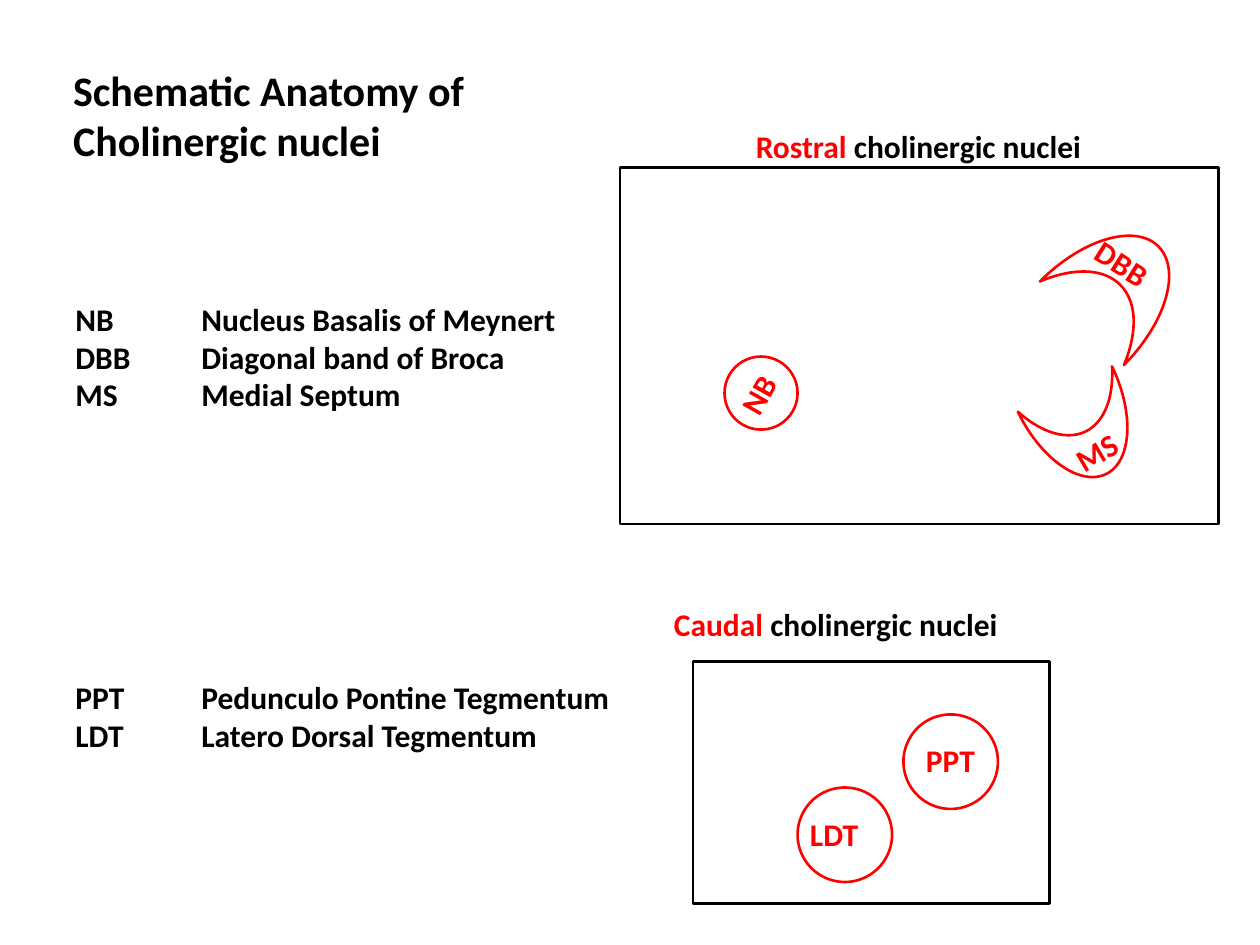
from dataclasses import dataclass

from lxml import etree
from pptx import Presentation, util as u
from pptx.dml.color import RGBColor
from pptx.enum import shapes, text
from pptx.oxml import ns


@dataclass(frozen=True)
class Theme:
    ink: str = "000000"
    red: str = "FF0000"
    font: str = "Calibri"
    head: int = 24
    body: int = 18
    line: float = 1.5


look = Theme()
kind = shapes.MSO_SHAPE


def write(box, lines, size=look.body, wrap=True, turn=0, gaps=()):
    """Fill box with lines of (words, colour) runs; gaps maps line to points above."""
    box.rotation = turn
    frame = box.text_frame
    frame.word_wrap = wrap
    frame.auto_size = text.MSO_AUTO_SIZE.NONE
    frame.vertical_anchor = text.MSO_ANCHOR.TOP
    above = dict(gaps)
    for i, runs in enumerate(lines):
        para = frame.add_paragraph() if i else frame.paragraphs[0]
        para.alignment = text.PP_ALIGN.LEFT
        para.space_before = u.Pt(above.get(i, 0))
        for words, color in runs:
            run = para.add_run()
            run.text = words
            run.font.name = look.font
            run.font.size = u.Pt(size)
            run.font.bold = True
            run.font.color.rgb = RGBColor.from_string(color)


def draw(form, spot, color, turn=0):
    """Add an unfilled outline shape."""
    shape = slide.shapes.add_shape(form, *map(u.Inches, spot))
    shape.rotation = turn
    shape.shadow.inherit = False
    shape.fill.background()
    shape.line.color.rgb = RGBColor.from_string(color)
    shape.line.width = u.Pt(look.line)


deck = Presentation()
deck.slide_width, deck.slide_height = u.Inches(10), u.Inches(7.5)
slide = deck.slides.add_slide(deck.slide_layouts.get_by_name("Title Only"))

# Title
title = slide.shapes.title
title.left, title.top = u.Inches(0.48), u.Inches(0.46)
title.width, title.height = u.Inches(3.52), u.Inches(1.3)
write(title, [[("Schematic Anatomy of", look.ink)],
              [("Cholinergic nuclei", look.ink)]], size=look.head)

# Regions: frame, then heading
regions = [
    ("Rostral", (4.92, 1.33, 4.75, 2.83), (5.9, 0.96, 3.26, 0.4)),
    ("Caudal", (5.5, 5.25, 2.83, 1.92), (5.25, 4.75, 3.23, 0.4)),
]
for name, pane, spot in regions:
    draw(kind.RECTANGLE, pane, look.ink)
    box = slide.shapes.add_textbox(*map(u.Inches, spot))
    write(box, [[(name, look.red), (" cholinergic nuclei", look.ink)]], wrap=False)

# Nuclei: outline and its turn, then label and its turn
nuclei = [
    ("LDT", kind.OVAL, (6.33, 6.25, 0.75, 0.75), 0, (6.33, 6.42, 0.75, 0.4), 0),
    ("PPT", kind.OVAL, (7.17, 5.67, 0.75, 0.75), 0, (7.25, 5.83, 0.75, 0.4), 0),
    ("MS", kind.MOON, (8.24, 3.01, 0.75, 0.83), 244.3, (8.42, 3.33, 0.75, 0.4), 329.5),
    ("NB", kind.OVAL, (5.75, 2.83, 0.58, 0.58), 0, (5.75, 2.91, 0.56, 0.4), 299.3),
    ("DBB", kind.MOON, (8.46, 1.79, 0.86, 0.94), 134.8, (8.58, 1.92, 0.75, 0.4), 32.3),
]
for name, form, area, tilt, spot, turn in nuclei:
    draw(form, area, look.red, tilt)
    box = slide.shapes.add_textbox(*map(u.Inches, spot))
    write(box, [[(name, look.red)]], wrap=name != "NB", turn=turn)

# Key to the short names, with the caudal group set lower
terms = [
    "NB\tNucleus Basalis of Meynert",
    "DBB \tDiagonal band of Broca",
    "MS\tMedial Septum",
    "PPT \tPedunculo Pontine Tegmentum",
    "LDT\tLatero Dorsal Tegmentum",
]
key = slide.shapes.add_textbox(*map(u.Inches, (0.5, 2.33, 4.95, 3.7)))
write(key, [[(term, look.ink)] for term in terms], gaps={3: 151.5})
for para in key.text_frame.paragraphs:
    tabs = etree.SubElement(para._p.get_or_add_pPr(), ns.qn("a:tabLst"))
    etree.SubElement(tabs, ns.qn("a:tab"), pos=str(u.Inches(1)), algn="l")

deck.save("out.pptx")
